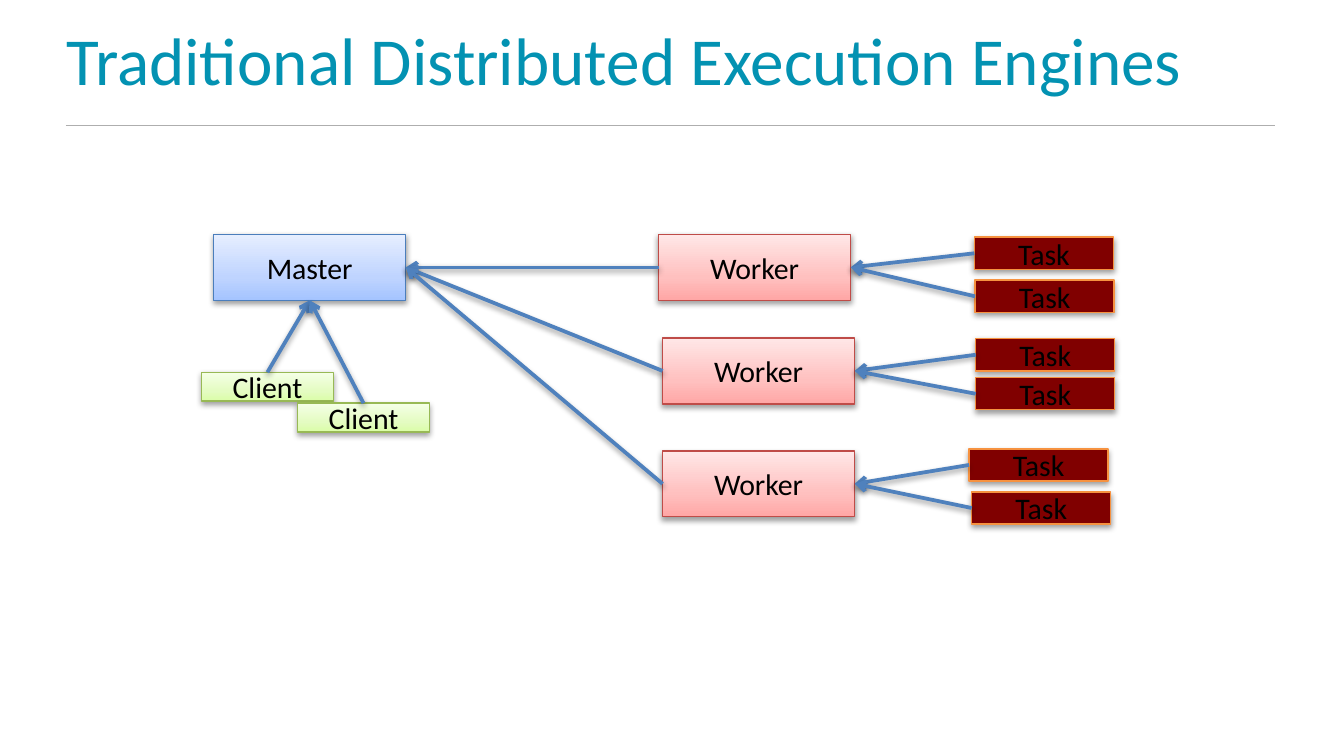
from copy import deepcopy
from dataclasses import dataclass

from pptx import Presentation
from pptx.dml.color import RGBColor
from pptx.enum.shapes import MSO_CONNECTOR, MSO_SHAPE
from pptx.enum.text import MSO_ANCHOR, MSO_AUTO_SIZE, PP_ALIGN
from pptx.oxml import parse_xml
from pptx.oxml.ns import nsdecls, qn
from pptx.shapes.autoshape import Shape
from pptx.shapes.connector import Connector
from pptx.slide import Slide
from pptx.util import Emu, Pt

EMU_PER_PX = 4572
TOP, LEFT, BOTTOM, RIGHT = range(4)


@dataclass(frozen=True)
class Theme:
    """Colours, font and type sizes of the slide."""
    font: str = "Calibri"
    title: str = "0392B2"
    text: str = "000000"
    rule: str = "AEAEAE"
    arrow: str = "4F81BD"
    title_pt: int = 36
    label_pt: int = 16


@dataclass(frozen=True)
class Role:
    """Label, size and colours shared by the boxes of one role."""
    label: str
    width: int
    height: int
    line: str
    fills: tuple[str, ...]


@dataclass(frozen=True)
class WorkerGroup:
    """Position of a worker and of the tasks that report to it."""
    at: tuple[int, int]
    tasks: tuple[tuple[int, int], ...]


THEME = Theme()
MASTER = Role("Master", 286, 98, "4B7EBC", ("A4C4FF", "BFD4FF", "E6EEFF"))
WORKER = Role("Worker", 286, 98, "BF4C48", ("FFA6A5", "FFC0BF", "FFE7E7"))
TASK = Role("Task", 207, 48, "F69240", ("800000",))
CLIENT = Role("Client", 196, 43, "98B955", ("DAFDA7", "E4FCC2", "F5FFE7"))
STOPS = (0, 0.35, 1)
CLIENTS = ((300, 554), (443, 600))
GROUPS = (
    WorkerGroup((980, 349), ((1450, 353), (1451, 417))),
    WorkerGroup((986, 503), ((1452, 504), (1452, 562))),
    WorkerGroup((986, 671), ((1442, 668), (1446, 732))),
)


def px(n: int) -> Emu:
    """Convert px, at 200 to the inch, into EMU."""
    return Emu(n * EMU_PER_PX)


def rgb(value: str) -> RGBColor:
    """Turn a hex string into a colour."""
    return RGBColor.from_string(value)


def set_effects(s: Shape | Connector, shadow: bool = True) -> None:
    """Give a shape a soft shadow below it, or no effect at all."""
    effects = parse_xml(f"<a:effectLst {nsdecls('a')}/>")
    if shadow:
        effects.append(parse_xml(
            f'<a:outerShdw {nsdecls("a")} blurRad="40000" dist="20000" dir="5400000" rotWithShape="0">'
            '<a:srgbClr val="000000"><a:alpha val="38000"/></a:srgbClr></a:outerShdw>'))
    s._element.spPr.append(effects)


def set_fill(s: Shape, fills: tuple[str, ...]) -> None:
    """Fill a shape with one colour or a gradient rising from the bottom."""
    if len(fills) == 1:
        s.fill.solid()
        s.fill.fore_color.rgb = rgb(fills[0])
        return
    s.fill.gradient()
    s.fill.gradient_angle = 90
    stops = s._element.spPr.find(".//" + qn("a:gsLst"))
    stops.append(deepcopy(stops[-1]))
    for stop, position, color in zip(s.fill.gradient_stops, STOPS, fills):
        stop.position = position
        stop.color.rgb = rgb(color)


def add_box(slide: Slide, role: Role, at: tuple[int, int]) -> Shape:
    """Draw a labelled box of the given role."""
    s = slide.shapes.add_shape(
        MSO_SHAPE.RECTANGLE, px(at[0]), px(at[1]), px(role.width), px(role.height))
    set_fill(s, role.fills)
    s.line.color.rgb = rgb(role.line)
    s.line.width = Pt(0.75)
    set_effects(s)
    tf = s.text_frame
    tf.text = role.label
    tf.vertical_anchor = MSO_ANCHOR.MIDDLE
    p = tf.paragraphs[0]
    p.alignment = PP_ALIGN.CENTER
    font = p.runs[0].font
    font.name, font.size = THEME.font, Pt(THEME.label_pt)
    font.color.rgb = rgb(THEME.text)
    return s


def add_arrow(slide: Slide, start: Shape, start_side: int, end: Shape, end_side: int) -> None:
    """Connect two boxes with an arrow pointing at the second."""
    c = slide.shapes.add_connector(MSO_CONNECTOR.STRAIGHT, 0, 0, 0, 0)
    c.begin_connect(start, start_side)
    c.end_connect(end, end_side)
    c.line.color.rgb = rgb(THEME.arrow)
    c.line.width = Pt(2)
    c.line._get_or_add_ln().append(parse_xml(f'<a:tailEnd {nsdecls("a")} type="arrow"/>'))
    set_effects(c)


def add_heading(slide: Slide) -> None:
    """Set the title and draw the rule under it."""
    rule = slide.shapes.add_connector(MSO_CONNECTOR.STRAIGHT, px(98), px(186), px(1898), px(186))
    rule.line.color.rgb = rgb(THEME.rule)
    rule.line.width = Pt(0.5)
    set_effects(rule, shadow=False)
    title = slide.shapes.title
    title.left, title.top, title.width, title.height = px(79), px(5), px(1800), px(188)
    tf = title.text_frame
    tf.text = "Traditional Distributed Execution Engines"
    tf.auto_size = MSO_AUTO_SIZE.NONE
    tf.vertical_anchor = MSO_ANCHOR.MIDDLE
    p = tf.paragraphs[0]
    p.alignment = PP_ALIGN.LEFT
    p.line_spacing = 0.8
    font = p.runs[0].font
    font.name, font.size = THEME.font, Pt(THEME.title_pt)
    font.color.rgb = rgb(THEME.title)


def main() -> None:
    """Build and save the slide."""
    prs = Presentation()
    prs.slide_width, prs.slide_height = px(2000), px(1125)
    slide = prs.slides.add_slide(prs.slide_layouts[5])
    add_heading(slide)
    master = add_box(slide, MASTER, (318, 349))
    workers = [add_box(slide, WORKER, group.at) for group in GROUPS]
    tasks = [[add_box(slide, TASK, at) for at in group.tasks] for group in GROUPS]
    clients = [add_box(slide, CLIENT, at) for at in CLIENTS]
    for client in clients:
        add_arrow(slide, client, TOP, master, BOTTOM)
    for worker in workers:
        add_arrow(slide, worker, LEFT, master, RIGHT)
    for worker, group_tasks in zip(workers, tasks):
        for task in group_tasks:
            add_arrow(slide, task, LEFT, worker, RIGHT)
    prs.save("out.pptx")


if __name__ == "__main__":
    main()
